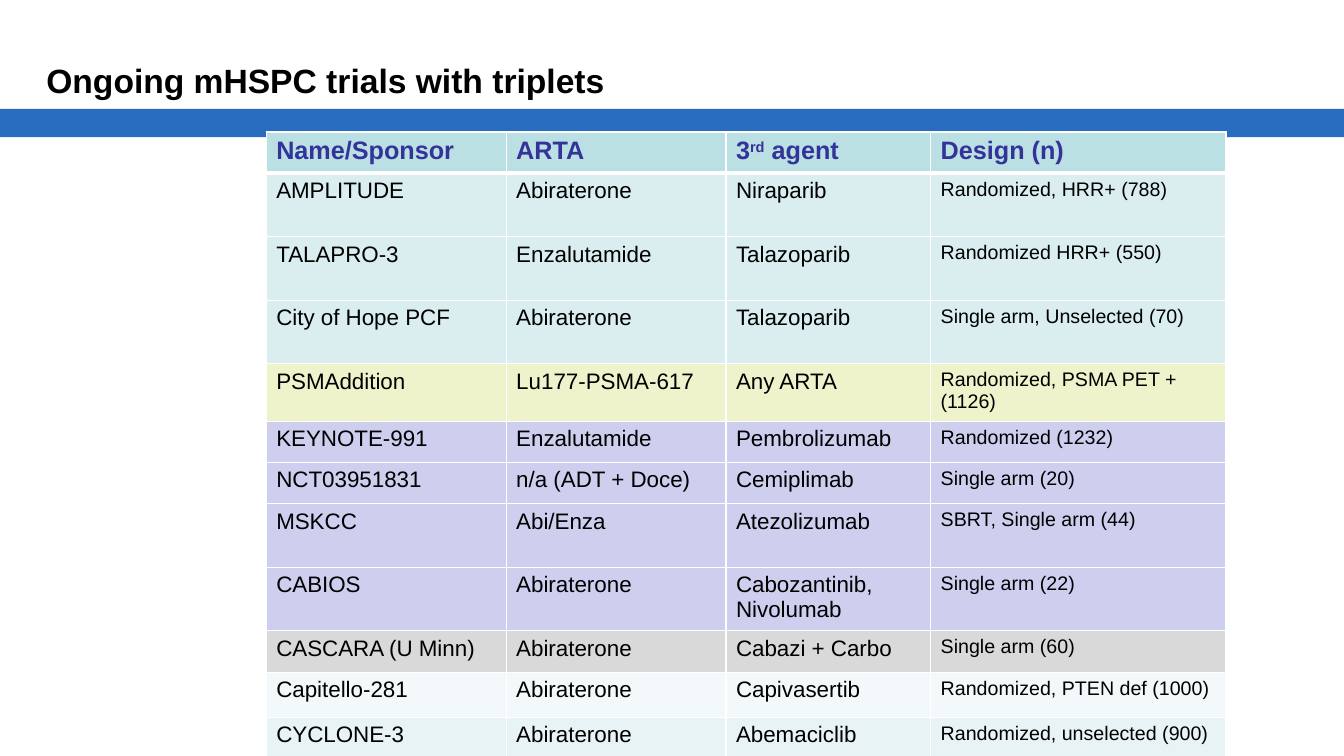
from lxml.etree import SubElement
from pptx import Presentation
from pptx.dml.color import RGBColor
from pptx.enum.shapes import MSO_SHAPE
from pptx.enum.text import MSO_ANCHOR, PP_ALIGN
from pptx.oxml.ns import qn
from pptx.util import Inches, Pt

WIDE, HIGH = 13.33, 7.5
HUES = {
    "band": "296DC0", "ink": "000000", "head": "333399", "line": "FFFFFF",
    "top": "BBE0E3", "parp": "DAEDEF", "psma": "EFF3CB", "immune": "CECEEF",
    "chemo": "D9D9D9", "akt": "F3F9FA", "cdk": "E7F3F4",
}
COLS = [2.38, 2.18, 2.03, 2.93]
# Raised letters stand between carets
HEAD = ["Name/Sponsor", "ARTA", "3^rd^ agent", "Design (n)"]
# Row height, fill, cells
TRIALS = [
    (0.63, "parp", ["AMPLITUDE", "Abiraterone", "Niraparib", "Randomized, HRR+ (788)"]),
    (0.63, "parp", ["TALAPRO-3", "Enzalutamide", "Talazoparib", "Randomized HRR+ (550)"]),
    (0.63, "parp", ["City of Hope PCF", "Abiraterone", "Talazoparib", "Single arm, Unselected (70)"]),
    (0.57, "psma", ["PSMAddition", "Lu177-PSMA-617", "Any ARTA", "Randomized, PSMA PET + (1126)"]),
    (0.41, "immune", ["KEYNOTE-991", "Enzalutamide", "Pembrolizumab", "Randomized (1232)"]),
    (0.41, "immune", ["NCT03951831", "n/a (ADT + Doce)", "Cemiplimab", "Single arm (20)"]),
    (0.63, "immune", ["MSKCC", "Abi/Enza", "Atezolizumab", "SBRT, Single arm (44)"]),
    (0.63, "immune", ["CABIOS", "Abiraterone", "Cabozantinib, Nivolumab", "Single arm (22)"]),
    (0.41, "chemo", ["CASCARA (U Minn)", "Abiraterone", "Cabazi + Carbo", "Single arm (60)"]),
    (0.45, "akt", ["Capitello-281", "Abiraterone", "Capivasertib", "Randomized, PTEN def (1000)"]),
    (0.39, "cdk", ["CYCLONE-3", "Abiraterone", "Abemaciclib", "Randomized, unselected (900)"]),
]


def hue(name):
    return RGBColor.from_string(HUES[name])


def write(frame, text, size=16, color="ink", bold=False):
    para = frame.paragraphs[0]
    para.alignment = PP_ALIGN.LEFT
    for i, part in enumerate(text.split("^")):
        run = para.add_run()
        run.text = part
        font = run.font
        font.name, font.size, font.bold = "Arial", Pt(size), bold
        font.color.rgb = hue(color)
        if i % 2:
            run._r.get_or_add_rPr().set("baseline", "30000")


def edge(cell, **widths):
    props = cell._tc.get_or_add_tcPr()
    for side in "LRTB":
        line = SubElement(props, qn(f"a:ln{side}"), w=str(Pt(widths.get(side, 1))))
        fill = SubElement(line, qn("a:solidFill"))
        SubElement(fill, qn("a:srgbClr"), val=HUES["line"])


def add_band(slide, box):
    band = slide.shapes.add_shape(MSO_SHAPE.RECTANGLE, *map(Inches, box))
    band.shadow.inherit = False
    band.fill.solid()
    band.fill.fore_color.rgb = hue("band")
    band.line.fill.background()


def add_title(slide, box, text):
    title = slide.shapes.title
    title.left, title.top, title.width, title.height = map(Inches, box)
    title.text_frame.vertical_anchor = MSO_ANCHOR.MIDDLE
    write(title.text_frame, text, size=24, bold=True)


def add_trials(slide, box):
    rows = [(0.41, "top", HEAD)] + TRIALS
    table = slide.shapes.add_table(len(rows), len(COLS), *map(Inches, box)).table
    table.first_row = table.horz_banding = False
    for col, wide in zip(table.columns, COLS):
        col.width = Inches(wide)
    for r, (high, fill, texts) in enumerate(rows):
        table.rows[r].height = Inches(high)
        for c, text in enumerate(texts):
            cell = table.cell(r, c)
            # A thick rule parts the header from the trials
            edge(cell, T=3 if r == 1 else 1, B=3 if r == 0 else 1)
            cell.fill.solid()
            cell.fill.fore_color.rgb = hue(fill)
            if r == 0:
                write(cell.text_frame, text, size=18, color="head", bold=True)
            else:
                write(cell.text_frame, text, size=14 if c == 3 else 16)


def main():
    deck = Presentation()
    deck.slide_width, deck.slide_height = Inches(WIDE), Inches(HIGH)
    slide = deck.slides.add_slide(deck.slide_layouts[5])
    add_band(slide, (0, 1.08, WIDE, 0.28))
    add_title(slide, (0.36, 0.47, 12.44, 0.65), "Ongoing mHSPC trials with triplets")
    add_trials(slide, (2.64, 1.31, sum(COLS), HIGH - 1.31))
    deck.save("out.pptx")


if __name__ == "__main__":
    main()
